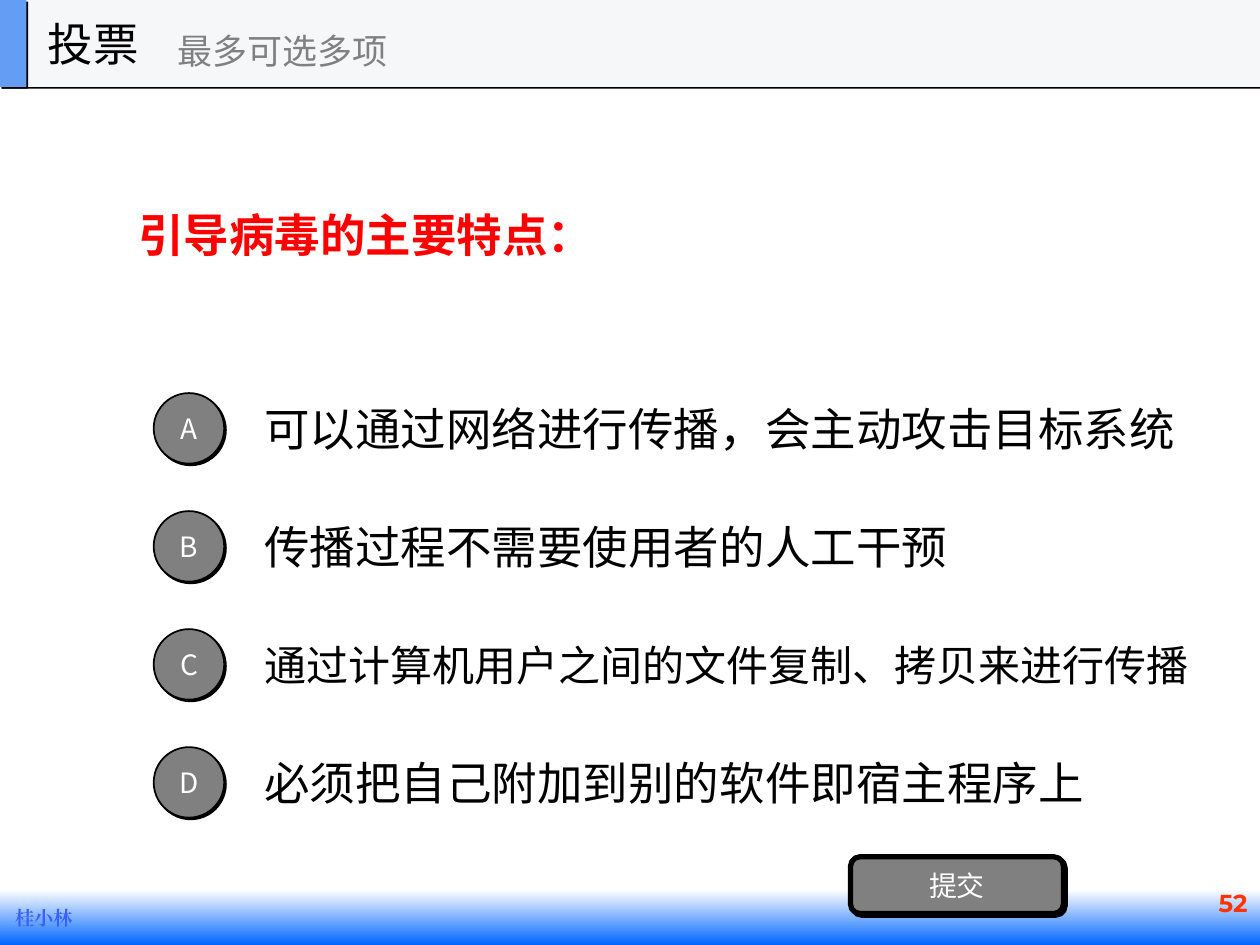
from lxml.etree import SubElement
from pptx import Presentation
from pptx.dml.color import RGBColor
from pptx.enum.shapes import MSO_SHAPE
from pptx.enum.text import MSO_ANCHOR, PP_ALIGN
from pptx.oxml.ns import qn
from pptx.util import Inches, Pt

# Content
TITLE = "投票"
HINT = "最多可选多项"
QUERY = "引导病毒的主要特点："
CHOICES = [  # letter, text, size, width
    ("A", "可以通过网络进行传播，会主动攻击目标系统", 26, 7.86),
    ("B", "传播过程不需要使用者的人工干预", 26, 7),
    ("C", "通过计算机用户之间的文件复制、拷贝来进行传播", 24, 8),
    ("D", "必须把自己附加到别的软件即宿主程序上", 26, 7),
]
SUBMIT = "提交"
AUTHOR = "桂小林"
PAGE = "52"

# Style
SANS = "Noto Sans CJK SC"
BLACK = RGBColor(0x00, 0x00, 0x00)
WHITE = RGBColor(0xFF, 0xFF, 0xFF)
GRAY = RGBColor(0x80, 0x80, 0x80)
RED = RGBColor(0xFF, 0x00, 0x00)
ORANGE = RGBColor(0xFF, 0x33, 0x00)
BLUE = RGBColor(0x00, 0x66, 0xFF)
INDIGO = RGBColor(0x38, 0x61, 0xFF)
SKY = RGBColor(0x63, 0x9E, 0xF4)
PALE = RGBColor(0xF6, 0xF7, 0xF8)

# Layout
FIRST, LAST, ROW = 3.05, 5.86, 0.7
BADGE = 0.56

deck = Presentation()
deck.slide_width, deck.slide_height = Inches(10), Inches(7.5)
slide = deck.slides.add_slide(deck.slide_layouts[6])


def put_text(shape, text, size=26, color=BLACK, font=SANS, bold=False,
             align=PP_ALIGN.LEFT, anchor=MSO_ANCHOR.MIDDLE, wrap=True):
    frame = shape.text_frame
    frame.word_wrap = wrap
    frame.vertical_anchor = anchor
    para = frame.paragraphs[0]
    para.alignment = align
    run = para.add_run()
    run.text = text
    run.font.size, run.font.bold = Pt(size), bold
    run.font.color.rgb = color
    run.font.name = font
    SubElement(run.font._element, qn("a:ea"), typeface=font)


def add_label(box, text, **style):
    put_text(slide.shapes.add_textbox(*map(Inches, box)), text, **style)


def add_block(kind, box, color=None, line=0, shadow=True):
    shape = slide.shapes.add_shape(kind, *map(Inches, box))
    shape.shadow.inherit = False
    if color is not None:
        shape.fill.solid()
        shape.fill.fore_color.rgb = color
    if line:
        shape.line.color.rgb = BLACK
        shape.line.width = Pt(line)
    else:
        shape.line.fill.background()
    if shadow:
        effects = shape._element.spPr.find(qn("a:effectLst"))
        outer = SubElement(effects, qn("a:outerShdw"), dist=str(Pt(1.4)),
                           dir="2700000", algn="ctr", rotWithShape="0")
        SubElement(outer, qn("a:srgbClr"), val=str(BLACK))
    return shape


def add_button(kind, box, text, line):
    shape = add_block(kind, box, GRAY, line)
    frame = shape.text_frame
    frame.margin_left = frame.margin_right = 0
    put_text(shape, text, size=16, color=WHITE, align=PP_ALIGN.CENTER)


# Footer band
band = add_block(MSO_SHAPE.RECTANGLE, (0, 7.06, 10, 0.44), shadow=False)
band.fill.gradient()
band.fill.gradient_angle = 270
for stop, color in zip(band.fill.gradient_stops, (WHITE, BLUE)):
    stop.color.rgb = color

# Question and choices
add_label((1, 0.69, 8, 2.34), QUERY, color=RED, bold=True)
step = (LAST - FIRST) / (len(CHOICES) - 1)
for i, (letter, text, size, width) in enumerate(CHOICES):
    top = FIRST + i * step
    add_label((2, top, width, ROW), text, size=size)
    add_button(MSO_SHAPE.OVAL,
               (1.22, top + (ROW - BADGE) / 2, BADGE, BADGE), letter, 1)

add_button(MSO_SHAPE.ROUNDED_RECTANGLE, (6.75, 6.8, 1.69, 0.45), SUBMIT, 3)

# Header bar
add_block(MSO_SHAPE.RECTANGLE, (0, 0, 10, 0.69), PALE)
add_block(MSO_SHAPE.RECTANGLE, (0, 0, 0.21, 0.69), SKY)
add_label((0.28, 0, 2.08, 0.69), TITLE)
add_label((1.31, 0.12, 2.5, 0.56), HINT, size=20, color=GRAY)

# Page number and author
add_label((7.05, 7, 2.95, 0.5), PAGE, size=14, color=ORANGE, bold=True,
          font="Montserrat", align=PP_ALIGN.RIGHT, anchor=MSO_ANCHOR.TOP)
add_label((0.02, 7.14, 0.66, 0.29), AUTHOR, size=11, color=INDIGO, bold=True,
          font="Times New Roman", align=PP_ALIGN.CENTER,
          anchor=MSO_ANCHOR.TOP, wrap=False)

deck.save("out.pptx")
